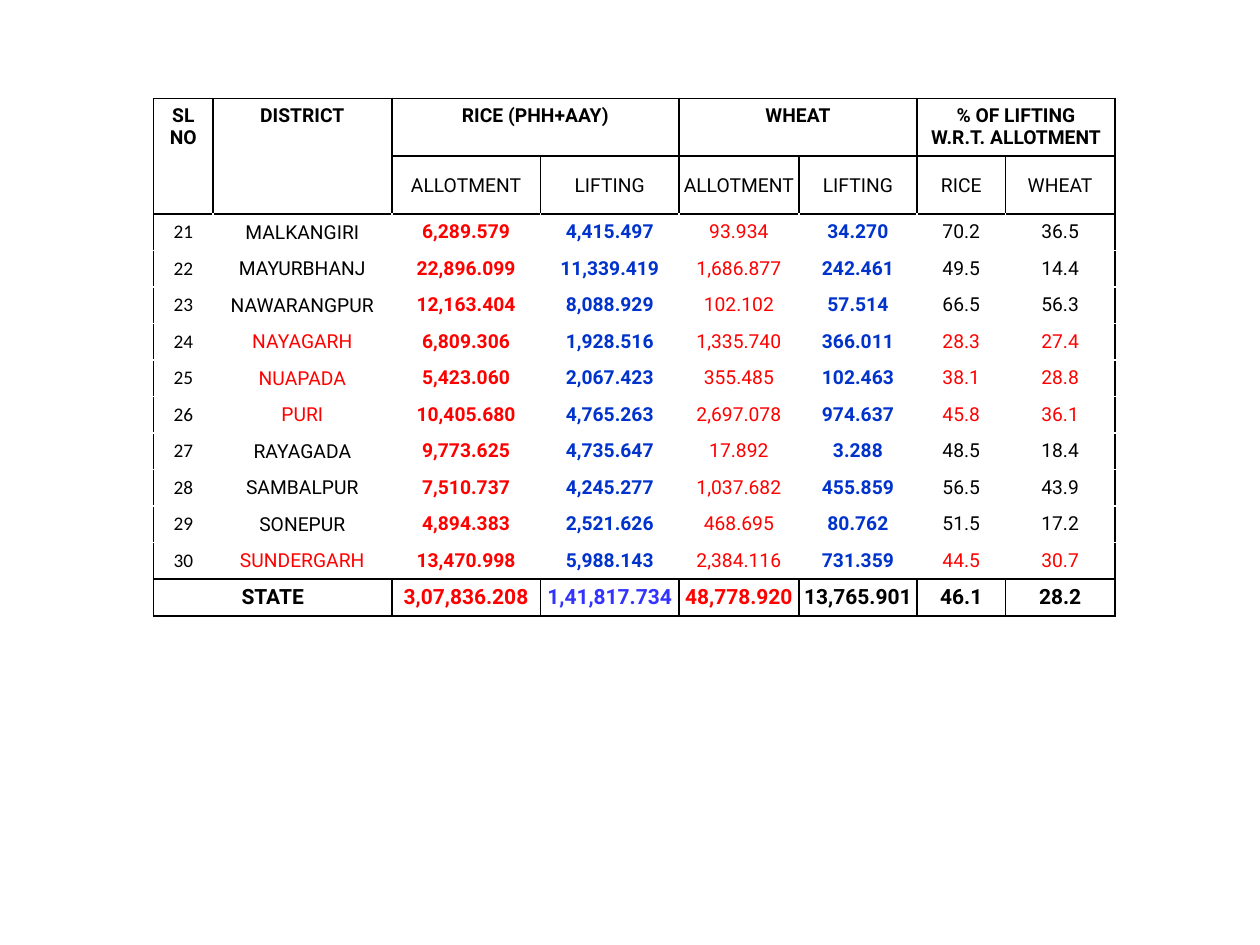
from typing import NamedTuple

from lxml.etree import SubElement
from pptx import Presentation
from pptx.dml.color import RGBColor
from pptx.enum.text import MSO_ANCHOR as Anchor, PP_ALIGN as Align
from pptx.oxml.ns import qn
from pptx.util import Inches, Pt

COLORS = {"black": "000000", "white": "FFFFFF", "red": "FF0000",
          "blue": "0033CC", "violet": "3333FF"}
LEFT, TOP = 1.22, 0.78
COL_WIDTHS = [0.47, 1.42, 1.18, 1.1, 0.95, 0.94, 0.7, 0.87]
HEAD_HEIGHTS, ROW_HEIGHT = [0.45, 0.46], 0.29
PADDED = (0.1, 0.05, 0.1, 0.05)
TIGHT = (0.01, 0.01, 0.01, 0)
FLUSH = (0, 0, 0, 0)


class District(NamedTuple):
    number: int
    name: str
    rice_allotment: str
    rice_lifting: str
    wheat_allotment: str
    wheat_lifting: str
    rice_pct: str
    wheat_pct: str
    low: bool = False


class Heading(NamedTuple):
    text: str
    col: int
    rows: int
    cols: int


HEADINGS = [
    Heading("SL NO", 0, 2, 1),
    Heading("DISTRICT", 1, 2, 1),
    Heading("RICE (PHH+AAY)", 2, 1, 2),
    Heading("WHEAT", 4, 1, 2),
    Heading("% OF LIFTING W.R.T. ALLOTMENT", 6, 1, 2),
]
SUBHEADINGS = ["ALLOTMENT", "LIFTING", "ALLOTMENT", "LIFTING", "RICE", "WHEAT"]
DISTRICTS = [
    District(21, "MALKANGIRI", "6,289.579", "4,415.497", "93.934", "34.270", "70.2", "36.5"),
    District(22, "MAYURBHANJ", "22,896.099", "11,339.419", "1,686.877", "242.461", "49.5", "14.4"),
    District(23, "NAWARANGPUR", "12,163.404", "8,088.929", "102.102", "57.514", "66.5", "56.3"),
    District(24, "NAYAGARH", "6,809.306", "1,928.516", "1,335.740", "366.011", "28.3", "27.4", True),
    District(25, "NUAPADA", "5,423.060", "2,067.423", "355.485", "102.463", "38.1", "28.8", True),
    District(26, "PURI", "10,405.680", "4,765.263", "2,697.078", "974.637", "45.8", "36.1", True),
    District(27, "RAYAGADA", "9,773.625", "4,735.647", "17.892", "3.288", "48.5", "18.4"),
    District(28, "SAMBALPUR", "7,510.737", "4,245.277", "1,037.682", "455.859", "56.5", "43.9"),
    District(29, "SONEPUR", "4,894.383", "2,521.626", "468.695", "80.762", "51.5", "17.2"),
    District(30, "SUNDERGARH", "13,470.998", "5,988.143", "2,384.116", "731.359", "44.5", "30.7", True),
]
STATE_TOTALS = [("3,07,836.208", "red"), ("1,41,817.734", "violet"), ("48,778.920", "red"),
                ("13,765.901", "black"), ("46.1", "black"), ("28.2", "black")]
FIRST_DATA = len(HEAD_HEIGHTS)
TOTAL_ROW = FIRST_DATA + len(DISTRICTS)
LAST_COL = len(COL_WIDTHS) - 1


def write(cell, text: str, *, color: str = "black", bold: bool = False, size: float = 11,
          font: str = "Roboto", insets: tuple = FLUSH, anchor=Anchor.MIDDLE) -> None:
    cell.margin_left, cell.margin_top, cell.margin_right, cell.margin_bottom = map(Inches, insets)
    cell.vertical_anchor = anchor
    p = cell.text_frame.paragraphs[0]
    p.alignment = Align.CENTER
    r = p.add_run()
    r.text = text
    r.font.name, r.font.size, r.font.bold = font, Pt(size), bold
    r.font.color.rgb = RGBColor.from_string(COLORS[color])


def draw_borders(cell, row: int, col: int) -> None:
    """Rule headings and totals in black, and only the outline of the data block."""
    ruled = not FIRST_DATA <= row < TOTAL_ROW
    black_edges = {
        "a:lnL": ruled or col == 0,
        "a:lnR": ruled or col == LAST_COL,
        "a:lnT": ruled or row == FIRST_DATA,
        "a:lnB": ruled or row == TOTAL_ROW - 1,
    }
    tc_pr = cell._tc.get_or_add_tcPr()
    for tag, black in black_edges.items():
        ln = SubElement(tc_pr, qn(tag), w=str(Pt(1)))
        fill = SubElement(ln, qn("a:solidFill"))
        SubElement(fill, qn("a:srgbClr"), val=COLORS["black" if black else "white"])
    cell.fill.background()


def fill_headings(table) -> None:
    for h in HEADINGS:
        cell = table.cell(0, h.col)
        cell.merge(table.cell(h.rows - 1, h.col + h.cols - 1))
        write(cell, h.text, bold=True, insets=PADDED, anchor=Anchor.TOP)
    for col, text in enumerate(SUBHEADINGS, 2):
        write(table.cell(1, col), text, insets=TIGHT)


def fill_district(table, row: int, d: District) -> None:
    flag = "red" if d.low else "black"
    write(table.cell(row, 0), str(d.number), font="Calibri", insets=PADDED)
    write(table.cell(row, 1), d.name, color=flag, insets=TIGHT)
    figures = [
        (d.rice_allotment, "red", True),
        (d.rice_lifting, "blue", True),
        (d.wheat_allotment, "red", False),
        (d.wheat_lifting, "blue", True),
        (d.rice_pct, flag, False),
        (d.wheat_pct, flag, False),
    ]
    for col, (text, color, bold) in enumerate(figures, 2):
        write(table.cell(row, col), text, color=color, bold=bold)


def fill_totals(table) -> None:
    label = table.cell(TOTAL_ROW, 0)
    label.merge(table.cell(TOTAL_ROW, 1))
    write(label, "STATE", bold=True, size=12, insets=PADDED)
    for col, (text, color) in enumerate(STATE_TOTALS, 2):
        write(table.cell(TOTAL_ROW, col), text, color=color, bold=True, size=12)


def main() -> None:
    prs = Presentation()
    prs.slide_width, prs.slide_height = Inches(10), Inches(7.5)
    s = prs.slides.add_slide(prs.slide_layouts[6])
    heights = HEAD_HEIGHTS + [ROW_HEIGHT] * (len(DISTRICTS) + 1)
    table = s.shapes.add_table(len(heights), len(COL_WIDTHS), Inches(LEFT), Inches(TOP),
                               Inches(sum(COL_WIDTHS)), Inches(sum(heights))).table
    table.first_row = table.horz_banding = False
    for column, width in zip(table.columns, COL_WIDTHS):
        column.width = Inches(width)
    for row, height in zip(table.rows, heights):
        row.height = Inches(height)

    fill_headings(table)
    for row, district in enumerate(DISTRICTS, FIRST_DATA):
        fill_district(table, row, district)
    fill_totals(table)
    for row in range(len(heights)):
        for col in range(len(COL_WIDTHS)):
            draw_borders(table.cell(row, col), row, col)
    prs.save("out.pptx")


if __name__ == "__main__":
    main()
